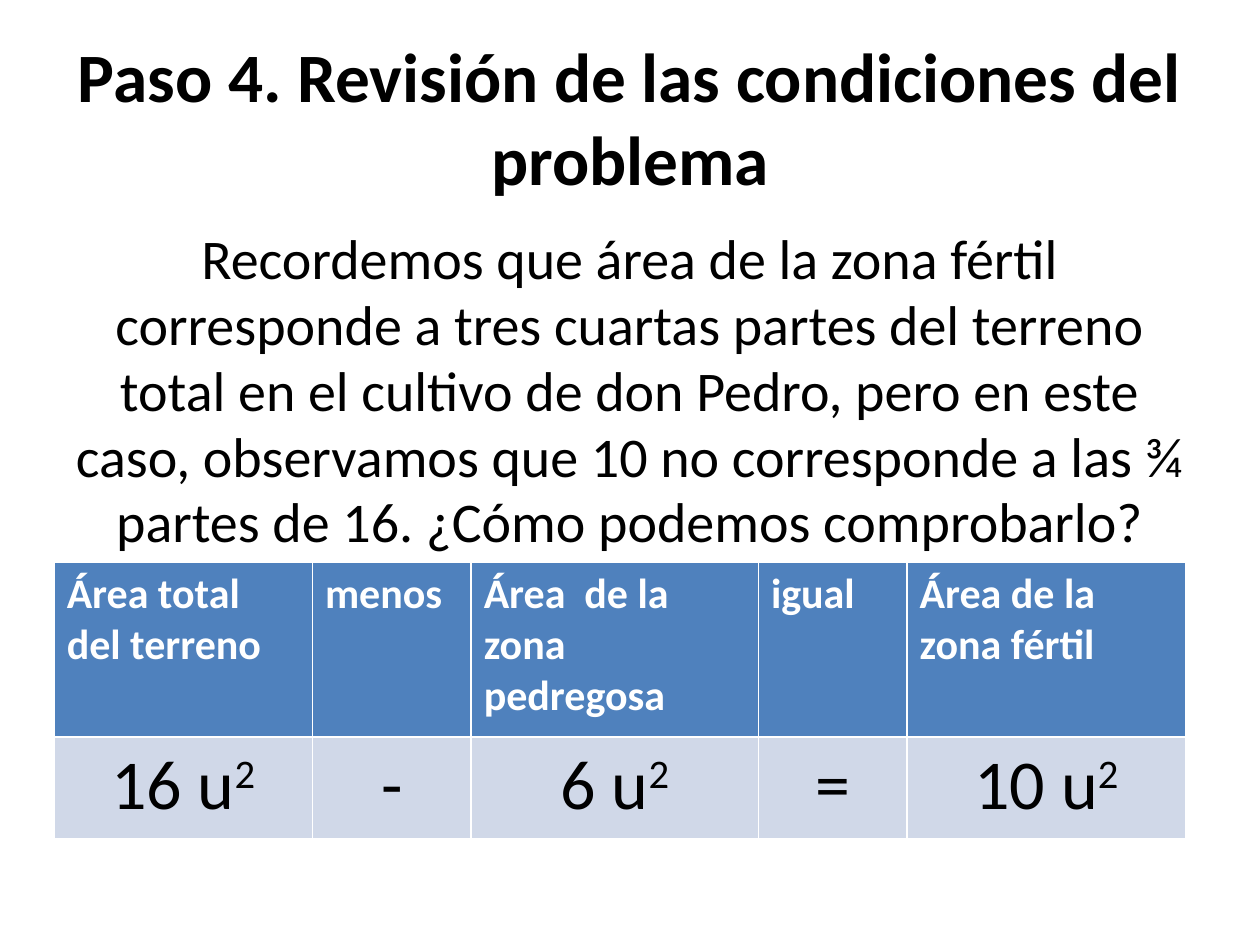
import pptx
import pptx.dml.color
import pptx.enum.text
import pptx.util
from pptx.util import Inches

COLORS = {"text": "000000", "header": "4F81BD", "header_text": "FFFFFF", "values": "D0D8E8"}
FONT = "Calibri"
CENTER = pptx.enum.text.PP_ALIGN.CENTER
TITLE = "Paso 4. Revisión de las condiciones del problema"
REMINDER = (
    "Recordemos que área de la zona fértil corresponde a tres cuartas partes del terreno "
    "total en el cultivo de don Pedro, pero en este caso, observamos que 10 no corresponde "
    "a las ¾ partes de 16. ¿Cómo podemos comprobarlo?"
)
COLUMNS = [
    (2.05, "Área total del terreno", "16 u", "2"),
    (1.26, "menos", "-", ""),
    (2.28, "Área  de la zona pedregosa", "6 u", "2"),
    (1.18, "igual", "=", ""),
    (2.21, "Área de la zona fértil", "10 u", "2"),
]
ROW_HEIGHTS = [1.39, 0.81]


def rgb(name):
    """Return the named colour."""
    return pptx.dml.color.RGBColor.from_string(COLORS[name])


def add_span(para, text, size, color="text", bold=False, superscript=False):
    """Add one formatted run to a paragraph."""
    span = para.add_run()
    span.text = text
    span.font.name = FONT
    span.font.size = pptx.util.Pt(size)
    span.font.bold = bold
    span.font.color.rgb = rgb(color)
    if superscript:
        span.font._element.set("baseline", "30000")


def add_title(page):
    """Place and fill the title placeholder."""
    title = page.shapes.title
    title.left, title.top = Inches(0.5), Inches(0.3)
    title.width, title.height = Inches(9), Inches(1.25)
    title.text_frame.vertical_anchor = pptx.enum.text.MSO_ANCHOR.MIDDLE
    para = title.text_frame.paragraphs[0]
    para.alignment = CENTER
    add_span(para, TITLE, 39.6, bold=True)


def add_reminder(page):
    """Add the centred paragraph under the title."""
    box = page.shapes.add_textbox(Inches(0.5), Inches(1.75), Inches(9), Inches(2.71))
    box.text_frame.word_wrap = True
    para = box.text_frame.paragraphs[0]
    para.alignment = CENTER
    para.line_spacing = 0.98
    para.space_before = pptx.util.Pt(3)
    add_span(para, REMINDER, 32)


def fill_cell(cell, color):
    """Fill a cell and return its paragraph."""
    cell.fill.solid()
    cell.fill.fore_color.rgb = rgb(color)
    return cell.text_frame.paragraphs[0]


def add_area_table(page):
    """Add the table that subtracts the stony area from the total."""
    width = sum(column[0] for column in COLUMNS)
    frame = page.shapes.add_table(
        len(ROW_HEIGHTS), len(COLUMNS),
        Inches(0.43), Inches(4.46), Inches(width), Inches(sum(ROW_HEIGHTS)),
    )
    table = frame.table
    for row, height in zip(table.rows, ROW_HEIGHTS):
        row.height = Inches(height)
    for index, (column_width, heading, value, exponent) in enumerate(COLUMNS):
        table.columns[index].width = Inches(column_width)
        para = fill_cell(table.cell(0, index), "header")
        add_span(para, heading, 24, "header_text", bold=True)
        para = fill_cell(table.cell(1, index), "values")
        para.alignment = CENTER
        add_span(para, value, 40)
        if exponent:
            add_span(para, exponent, 40, superscript=True)


def main():
    """Build and save the slide."""
    deck = pptx.Presentation()
    deck.slide_width, deck.slide_height = Inches(10), Inches(7.5)
    page = deck.slides.add_slide(deck.slide_layouts[5])
    add_title(page)
    add_reminder(page)
    add_area_table(page)
    deck.save("out.pptx")


if __name__ == "__main__":
    main()
